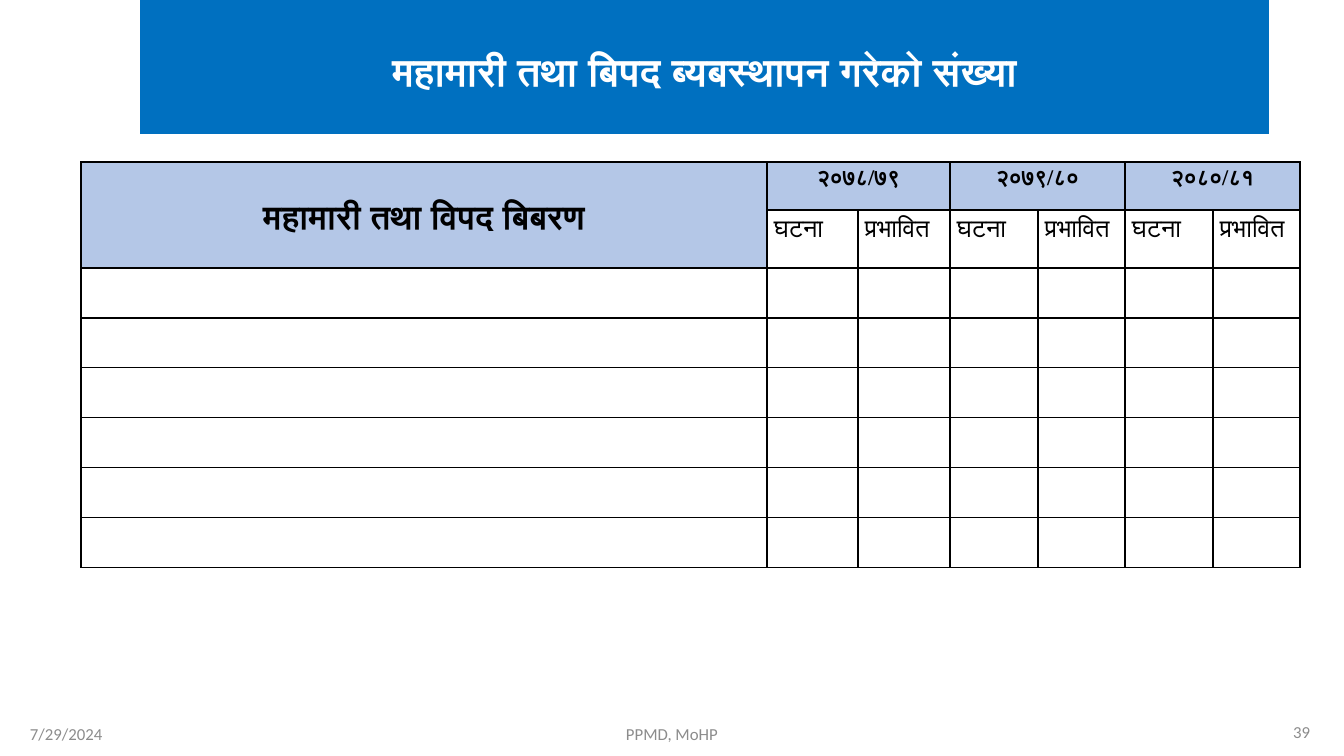
from lxml import etree
from pptx import Presentation
from pptx.dml.color import RGBColor
from pptx.enum.text import MSO_ANCHOR, MSO_AUTO_SIZE, PP_ALIGN
from pptx.oxml.ns import qn
from pptx.util import Pt

LEFT, CENTER, RIGHT = PP_ALIGN.LEFT, PP_ALIGN.CENTER, PP_ALIGN.RIGHT
TOP, MIDDLE = MSO_ANCHOR.TOP, MSO_ANCHOR.MIDDLE
NO_FIT = MSO_AUTO_SIZE.NONE
PX = 914400 / 100.8
COLORS = {"banner": "0070C0", "header": "B4C7E7", "white": "FFFFFF",
          "black": "000000", "footer": "8C8C8C"}


def px(length):
    return round(length * PX)


def format_text(frame, font, size, color, align, bold=False):
    """Format the frame's only paragraph, with Arial for Devanagari letters."""
    para = frame.paragraphs[0]
    para.alignment = align
    for span in para.runs:
        span.font.name = font
        span.font.size = Pt(size)
        span.font.bold = bold
        span.font.color.rgb = RGBColor.from_string(COLORS[color])
        etree.SubElement(span.font._element, qn("a:cs"), typeface="Arial")
    return para


deck = Presentation()
deck.slide_width, deck.slide_height = px(1344), px(756)
page = deck.slides.add_slide(deck.slide_layouts[5])

# Title banner
title = page.shapes.title
title.left, title.top, title.width, title.height = px(140), 0, px(1129), px(134)
title.fill.solid()
title.fill.fore_color.rgb = RGBColor.from_string(COLORS["banner"])
title.text_frame.text = "महामारी तथा बिपद ब्यबस्थापन गरेको संख्या"
title.text_frame.auto_size = NO_FIT
title.text_frame.vertical_anchor = MIDDLE
heading = format_text(title.text_frame, "Arial", 28, "white", CENTER, True)
heading.line_spacing = 1.15
heading.space_after = Pt(10)

# Table grid
column_widths = [686, 91, 92, 88, 87, 88, 87]
row_heights = [48, 58] + [50] * 6
table = page.shapes.add_table(len(row_heights), len(column_widths), px(81), px(162),
                              px(sum(column_widths)), px(sum(row_heights))).table
for column, width in zip(table.columns, column_widths):
    column.width = px(width)
for row, height in zip(table.rows, row_heights):
    row.height = px(height)

for cell in table.iter_cells():
    properties = cell._tc.get_or_add_tcPr()
    for side in ("a:lnL", "a:lnR", "a:lnT", "a:lnB"):
        border = etree.SubElement(properties, qn(side), w=str(Pt(1)))
        fill = etree.SubElement(border, qn("a:solidFill"))
        etree.SubElement(fill, qn("a:srgbClr"), val=COLORS["black"])
    cell.fill.background()

# Table headings: row, column, text, size, alignment, anchor
headings = [(0, 0, "महामारी तथा विपद बिबरण", 24, CENTER, MIDDLE)]
table.cell(0, 0).merge(table.cell(1, 0))
for index, year in enumerate(["२०७८/७९", "२०७९/८०", "२०८०/८१"]):
    first = 1 + 2 * index
    table.cell(0, first).merge(table.cell(0, first + 1))
    headings.append((0, first, year, 16, CENTER, TOP))
    headings.append((1, first, "घटना", 18, LEFT, TOP))
    headings.append((1, first + 1, "प्रभावित", 18, LEFT, TOP))

for row, column, text, size, align, anchor in headings:
    cell = table.cell(row, column)
    cell.margin_left = cell.margin_right = px(7)
    cell.margin_top = cell.margin_bottom = 0
    cell.vertical_anchor = anchor
    cell.text_frame.text = text
    is_header = row == 0
    para = format_text(cell.text_frame, "Times New Roman", size, "black", align, is_header)
    para.line_spacing = 1.15
    if is_header:
        cell.fill.solid()
        cell.fill.fore_color.rgb = RGBColor.from_string(COLORS["header"])

# Footer
for text, left, top, width, align in [("7/29/2024", 20, 724, 302, LEFT),
                                      ("PPMD, MoHP", 445, 724, 454, CENTER),
                                      ("39", 1018, 722, 302, RIGHT)]:
    box = page.shapes.add_textbox(px(left), px(top), px(width), px(20))
    box.text_frame.word_wrap = True
    box.text_frame.vertical_anchor = MIDDLE
    box.text_frame.text = text
    format_text(box.text_frame, "Calibri", 12, "footer", align)

deck.save("out.pptx")
